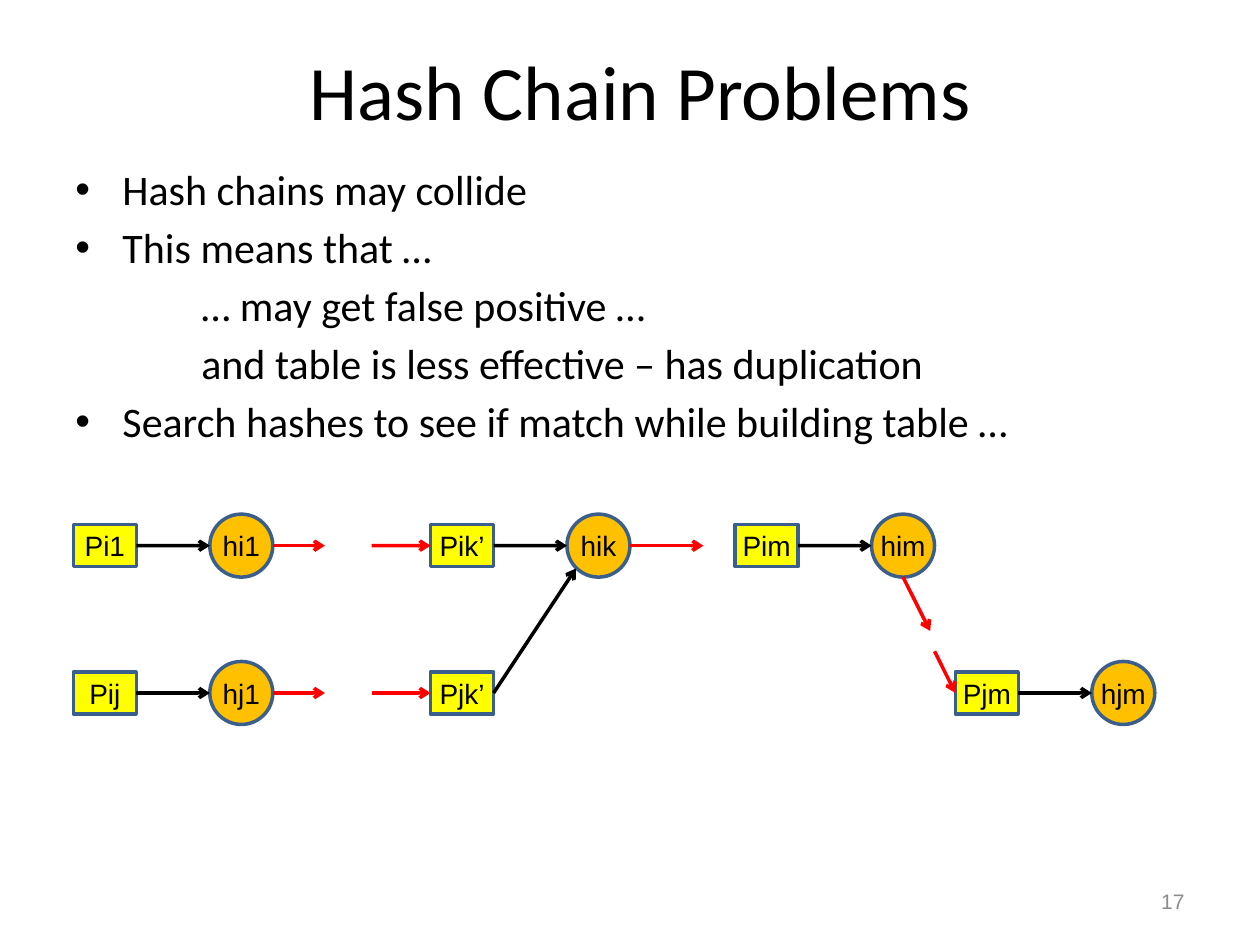
import pptx
import pptx.util
import pptx.dml.color
import pptx.enum.shapes
import pptx.enum.text
import pptx.oxml
import pptx.oxml.ns

Cm, Pt = pptx.util.Cm, pptx.util.Pt
Kind = pptx.enum.shapes.MSO_SHAPE
Align = pptx.enum.text.PP_ALIGN
Anchor = pptx.enum.text.MSO_ANCHOR

BLACK, RED, BLUE = "000000", "FF0000", "3A5F8C"
TOP, LOW = 11, 13.97
SIDE, HIGH = 1.27, 0.85
STEP = 2.75


def color(code):
    return pptx.dml.color.RGBColor.from_string(code)


def add_xml(parent, tag, **attrs):
    node = pptx.oxml.parse_xml(f"<{tag} {pptx.oxml.ns.nsdecls('a')}/>")
    for key, val in attrs.items():
        node.set(key, val)
    parent.append(node)


def style(para, size, face, code=BLACK, align=None):
    para.font.size = Pt(size)
    para.font.name = face
    para.font.color.rgb = color(code)
    para.alignment = align


def add_text(slide, area, lines, size, face, code=BLACK, align=None, anchor=Anchor.MIDDLE):
    frame = slide.shapes.add_textbox(*map(Cm, area)).text_frame
    frame.word_wrap = True
    frame.vertical_anchor = anchor
    frame.text = "\n".join(lines)
    for para in frame.paragraphs:
        style(para, size, face, code, align)
    return frame


def add_list(slide, area, items):
    texts = [text for text, _ in items]
    frame = add_text(slide, area, texts, 24, "Calibri", anchor=Anchor.TOP)
    for para, (_, mark) in zip(frame.paragraphs, items):
        para.space_before = Pt(4.3)
        props = para._p.get_or_add_pPr()
        props.set("marL", str(Cm(0.95 if mark else 2.54)))
        props.set("indent", str(Cm(-0.95 if mark else 0)))
        if mark:
            add_xml(props, "a:buFont", typeface="Arial")
            add_xml(props, "a:buChar", char="•")


def add_node(slide, kind, left, mid, high, fill, text):
    node = slide.shapes.add_shape(kind, Cm(left), Cm(mid - high / 2), Cm(SIDE), Cm(high))
    node.shadow.inherit = False
    node.fill.solid()
    node.fill.fore_color.rgb = color(fill)
    node.line.color.rgb = color(BLUE)
    node.line.width = Pt(2)
    frame = node.text_frame
    frame.word_wrap = False
    frame.vertical_anchor = Anchor.MIDDLE
    frame.margin_left = frame.margin_right = 0
    frame.text = text
    style(frame.paragraphs[0], 16, "Arial", BLACK, Align.CENTER)
    return node


def add_box(slide, left, mid, text):
    return add_node(slide, Kind.RECTANGLE, left, mid, HIGH, "FFFF00", text)


def add_arrow(slide, start, end, code, source=None, target=None):
    line = slide.shapes.add_connector(
        pptx.enum.shapes.MSO_CONNECTOR.STRAIGHT, *map(Cm, (*start, *end)))
    line.line.color.rgb = color(code)
    line.line.width = Pt(2)
    add_xml(line.line._get_or_add_ln(), "a:tailEnd", type="arrow")
    add_xml(line._element.spPr, "a:effectLst")
    if source:
        line.begin_connect(source, 3)
    if target:
        line.end_connect(target, 1)


def add_pair(slide, left, mid, plain, hashed):
    box = add_box(slide, left, mid, plain)
    add_node(slide, Kind.OVAL, left + STEP, mid, SIDE, "FFC000", hashed)
    add_arrow(slide, (left + SIDE, mid), (left + STEP, mid), BLACK, source=box)
    return box


def add_chains(slide):
    first, second, third, last = 1.48, 8.68, 14.82, 19.26
    add_pair(slide, first, TOP, "Pi1", "hi1")
    add_pair(slide, first, LOW, "Pij", "hj1")
    upper = add_pair(slide, second, TOP, "Pik’", "hik")
    lower = add_box(slide, second, LOW, "Pjk’")
    add_pair(slide, third, TOP, "Pim", "him")
    final = add_pair(slide, last, LOW, "Pjm", "hjm")

    for mid, box in ((TOP, upper), (LOW, lower)):
        right = first + STEP + SIDE
        add_arrow(slide, (right, mid), (right + 1.05, mid), RED)
        add_arrow(slide, (second - 1.19, mid), (second, mid), RED, target=box)
    right = second + STEP + SIDE
    add_arrow(slide, (right, TOP), (right + 1.48, TOP), RED)
    add_arrow(slide, (second + SIDE, LOW), (11.61, 11.46), BLACK, source=lower)
    add_arrow(slide, (third + STEP + SIDE / 2, TOP + SIDE / 2), (18.75, 12.72), RED)
    add_arrow(slide, (18.84, 13.13), (last, LOW), RED, target=final)


def main():
    deck = pptx.Presentation()
    deck.slide_width, deck.slide_height = Cm(25.4), Cm(19.05)
    slide = deck.slides.add_slide(deck.slide_layouts[6])
    add_text(slide, (0.85, 0.21, 24.13, 3.18), ["Hash Chain Problems"],
             44, "Calibri", align=Align.CENTER)
    add_list(slide, (1.27, 3.18, 22.86, 6.14), [
        ("Hash chains may collide", True),
        ("This means that …", True),
        ("… may get false positive …", False),
        ("and table is less effective – has duplication", False),
        ("Search hashes to see if match while building table …", True),
    ])
    add_chains(slide)
    add_text(slide, (18.2, 17.66, 5.93, 1.01), ["17"], 12, "Arial", "8C8C8C", Align.RIGHT)
    deck.save("out.pptx")


if __name__ == "__main__":
    main()
